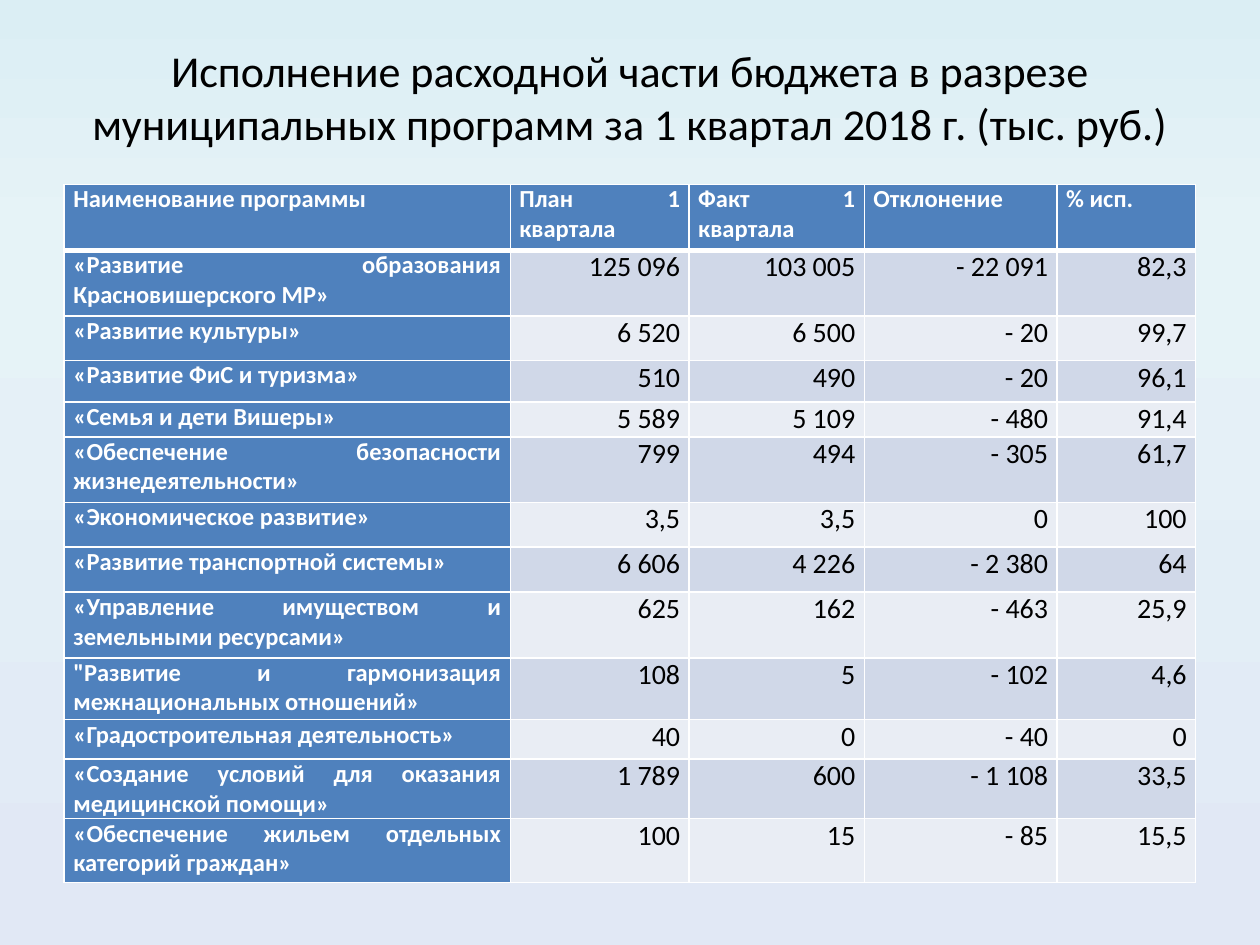
"""Build a slide with the budget execution table by municipal programme."""
from copy import deepcopy

from lxml import etree
from pptx import Presentation
from pptx import util as u
from pptx.dml.color import RGBColor
from pptx.enum import text
from pptx.oxml import ns

WHITE = RGBColor(0xFF, 0xFF, 0xFF)
BLACK = RGBColor(0, 0, 0)
BLUE = RGBColor(0x4F, 0x81, 0xBD)
BANDS = [RGBColor(0xD0, 0xD8, 0xE8), RGBColor(0xE9, 0xED, 0xF4)]
BACKGROUND = [
    (0, RGBColor(0xDB, 0xEE, 0xF4)),
    (0.25, RGBColor(0xE6, 0xF3, 0xF7)),
    (1, RGBColor(0xE1, 0xE8, 0xF5)),
]

TITLE = "Исполнение расходной части бюджета в разрезе муниципальных программ за 1 квартал 2018 г. (тыс. руб.)"
HEADER = ("Наименование программы", "План 1 квартала", "Факт 1 квартала", "Отклонение", "% исп.")
PROGRAMMES = [
    ("«Развитие образования Красновишерского МР»", "125 096", "103 005", "- 22 091", "82,3"),
    ("«Развитие культуры»", "6 520", "6 500", "- 20", "99,7"),
    ("«Развитие ФиС и туризма»", "510", "490", "- 20", "96,1"),
    ("«Семья и дети Вишеры»", "5 589", "5 109", "- 480", "91,4"),
    ("«Обеспечение безопасности жизнедеятельности»", "799", "494", "- 305", "61,7"),
    ("«Экономическое развитие»", "3,5", "3,5", "0", "100"),
    ("«Развитие транспортной системы»", "6 606", "4 226", "- 2 380", "64"),
    ("«Управление имуществом и земельными ресурсами»", "625", "162", "- 463", "25,9"),
    ("\"Развитие и гармонизация межнациональных отношений»", "108", "5", "- 102", "4,6"),
    ("«Градостроительная деятельность»", "40", "0", "- 40", "0"),
    ("«Создание условий для оказания медицинской помощи»", "1 789", "600", "- 1 108", "33,5"),
    ("«Обеспечение жильем отдельных категорий граждан»", "100", "15", "- 85", "15,5"),
]
COLUMN_WIDTHS = [254.9, 102.2, 100.1, 110.2, 79.2]
ROW_HEIGHTS = [37.5, 37.5, 25.6, 23.6, 20, 37.4, 25.6, 25.8, 37.5, 35.4, 22.4, 34.2, 36.6]


def write(frame, words, size, color, align, bold=False):
    """Put one formatted paragraph into a text frame."""
    frame.word_wrap = True
    paragraph = frame.paragraphs[0]
    paragraph.alignment = align
    run = paragraph.add_run()
    run.text = words
    run.font.name = "Calibri"
    run.font.size = u.Pt(size)
    run.font.bold = bold
    run.font.color.rgb = color


def add_borders(cell, bottom):
    """Draw white lines round a cell, with its own bottom width."""
    properties = cell._tc.get_or_add_tcPr()
    widths = {"a:lnL": 1, "a:lnR": 1, "a:lnT": 1, "a:lnB": bottom}
    for place, (side, width) in enumerate(widths.items()):
        line = etree.Element(ns.qn(side), w=str(u.Pt(width)))
        fill = etree.SubElement(line, ns.qn("a:solidFill"))
        etree.SubElement(fill, ns.qn("a:srgbClr"), val=str(WHITE))
        properties.insert(place, line)


def paint_background(slide):
    """Fill the slide with a vertical three-stop gradient."""
    fill = slide.background.fill
    fill.gradient()
    fill.gradient_angle = 270
    stop_list = slide._element.xpath(".//a:gsLst")[0]
    stop_list.append(deepcopy(stop_list[-1]))
    for stop, (position, color) in zip(fill.gradient_stops, BACKGROUND):
        stop.position = position
        stop.color.rgb = color


def add_title(slide):
    """Add the centred heading."""
    box = slide.shapes.add_textbox(u.Pt(36), u.Pt(21.6), u.Pt(648), u.Pt(67))
    box.text_frame.vertical_anchor = text.MSO_ANCHOR.MIDDLE
    write(box.text_frame, TITLE, 25.2, BLACK, text.PP_ALIGN.CENTER)


def add_programme_table(slide):
    """Add the table of programmes with a blue header row and name column."""
    rows = [HEADER, *PROGRAMMES]
    table = slide.shapes.add_table(
        len(rows), len(HEADER), u.Pt(36.7), u.Pt(105.5),
        u.Pt(sum(COLUMN_WIDTHS)), u.Pt(sum(ROW_HEIGHTS))).table
    for column, width in zip(table.columns, COLUMN_WIDTHS):
        column.width = u.Pt(width)
    for row, height in zip(table.rows, ROW_HEIGHTS):
        row.height = u.Pt(height)
    for r, values in enumerate(rows):
        for c, value in enumerate(values):
            cell = table.cell(r, c)
            heading = r == 0 or c == 0
            cell.margin_left = cell.margin_right = u.Pt(5.2)
            cell.margin_top = cell.margin_bottom = u.Pt(0)
            cell.fill.solid()
            cell.fill.fore_color.rgb = BLUE if heading else BANDS[(r - 1) % 2]
            add_borders(cell, bottom=3 if r == 0 else 1)
            if heading:
                write(cell.text_frame, value, 14, WHITE, text.PP_ALIGN.JUSTIFY, bold=True)
            else:
                write(cell.text_frame, value, 16, BLACK, text.PP_ALIGN.RIGHT)


def main():
    """Assemble and save the slide."""
    deck = Presentation()
    deck.slide_width, deck.slide_height = u.Pt(720), u.Pt(540)
    slide = deck.slides.add_slide(deck.slide_layouts[6])
    paint_background(slide)
    add_title(slide)
    add_programme_table(slide)
    deck.save("out.pptx")


if __name__ == "__main__":
    main()
